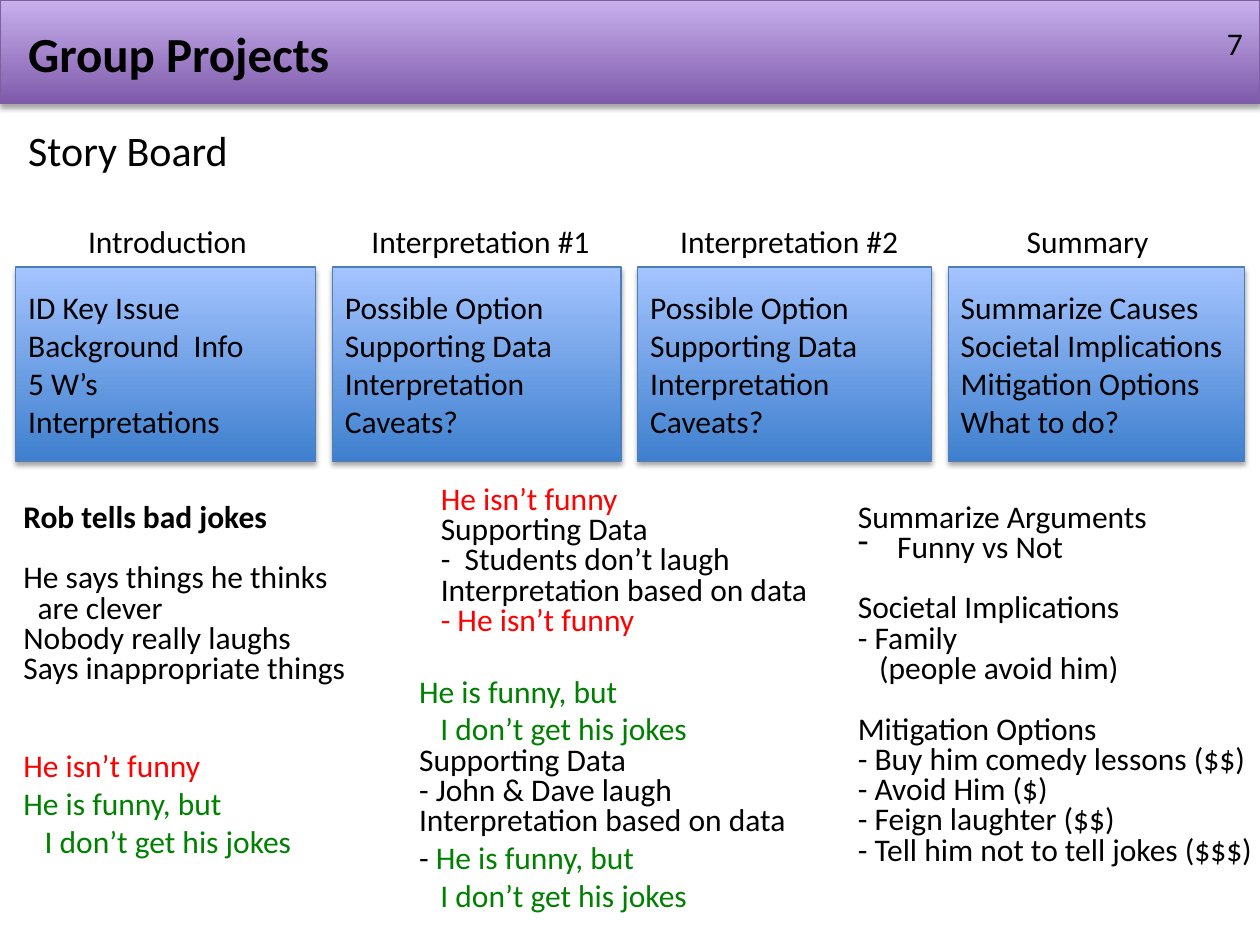
import dataclasses

import lxml.etree
import pptx
import pptx.dml.color
import pptx.enum.shapes
import pptx.enum.text
import pptx.oxml.ns
import pptx.util

Pt = pptx.util.Pt
RGBColor = pptx.dml.color.RGBColor
Anchor = pptx.enum.text.MSO_ANCHOR
Align = pptx.enum.text.PP_ALIGN
qn = pptx.oxml.ns.qn

BLACK = RGBColor(0x00, 0x00, 0x00)
RED = RGBColor(0xFF, 0x00, 0x00)
GREEN = RGBColor(0x00, 0x80, 0x00)
PURPLE_DARK = RGBColor(0x7F, 0x5B, 0xAB)
PURPLE_LIGHT = RGBColor(0xC8, 0xB0, 0xED)
PURPLE_LINE = RGBColor(0x7D, 0x60, 0xA0)
BLUE_DARK = RGBColor(0x3F, 0x80, 0xCE)
BLUE_LIGHT = RGBColor(0xA4, 0xC4, 0xFF)
BLUE_LINE = RGBColor(0x4B, 0x7E, 0xBC)

FONT = "Calibri"
TIGHT = 0.8
BLANK_LINE = 17.4
CARD_GAP = 9.6
INTERPRETATION = ["Possible Option", "Supporting Data", "Interpretation", "Caveats?"]


@dataclasses.dataclass
class Line:
    text: str
    color: RGBColor = BLACK
    spacing: float = TIGHT
    before: float = 0
    indent: float = 0
    bold: bool = False
    lead: str = ""
    bullet: str = ""


CARDS = [
    ("Introduction", 43.2, 106.6, 171.4,
     ["ID Key Issue", "Background  Info", "5 W’s", "Interpretations"]),
    ("Interpretation #1", 205.2, 141.8, 164.9, INTERPRETATION),
    ("Interpretation #2", 381.6, 141.8, 167.8, INTERPRETATION),
    ("Summary", 579.6, 85, 169.2,
     ["Summarize Causes", "Societal Implications", "Mitigation Options", "What to do?"]),
]


def funny_lines(before=0, lead=""):
    return [
        Line("He is funny, but", GREEN, 1, before=before, lead=lead),
        Line("I don’t get his jokes", GREEN, 1, indent=12.2),
    ]


INTRODUCTION_NOTES = [
    Line("Rob tells bad jokes", bold=True),
    Line("He says things he thinks", before=BLANK_LINE),
    Line("are clever", indent=8.1),
    Line("Nobody really laughs"),
    Line("Says inappropriate things"),
    Line("He isn’t funny", RED, 1, before=2 * BLANK_LINE),
    *funny_lines(),
]
NOT_FUNNY_NOTES = [
    Line("He isn’t funny", RED),
    Line("Supporting Data"),
    Line("-  Students don’t laugh"),
    Line("Interpretation based on data"),
    Line("- He isn’t funny", RED),
]
FUNNY_NOTES = [
    *funny_lines(),
    Line("Supporting Data"),
    Line("- John & Dave laugh"),
    Line("Interpretation based on data"),
    *funny_lines(lead="- "),
]
SUMMARY_NOTES = [
    Line("Summarize Arguments"),
    Line("Funny vs Not", indent=22.5, bullet="-"),
    Line("Societal Implications", before=BLANK_LINE),
    Line("- Family"),
    Line("(people avoid him)", indent=12.2),
    Line("Mitigation Options", before=BLANK_LINE),
    Line("- Buy him comedy lessons ($$)"),
    Line("- Avoid Him ($)"),
    Line("- Feign laughter ($$)"),
    Line("- Tell him not to tell jokes ($$$)"),
]


def format_run(run, size, color, bold):
    run.font.name = FONT
    run.font.size = Pt(size)
    run.font.color.rgb = color
    run.font.bold = bold


def write_lines(text_frame, lines, size=18, align=Align.LEFT):
    for index, line in enumerate(lines):
        paragraph = text_frame.paragraphs[0] if index == 0 else text_frame.add_paragraph()
        paragraph.alignment = align
        paragraph.line_spacing = line.spacing
        paragraph.space_before = Pt(line.before)
        properties = paragraph._p.get_or_add_pPr()
        properties.set("marL", str(Pt(line.indent)))
        if line.bullet:
            properties.set("indent", str(-Pt(line.indent)))
            lxml.etree.SubElement(properties, qn("a:buChar")).set("char", line.bullet)
        if line.lead:
            paragraph.text = line.lead
            format_run(paragraph.runs[0], size, BLACK, line.bold)
        run = paragraph.add_run()
        run.text = line.text
        format_run(run, size, line.color, line.bold)


def add_text(slide, left, top, width, height, lines, size=18, wrap=False,
             align=Align.LEFT, anchor=Anchor.TOP):
    shape = slide.shapes.add_textbox(Pt(left), Pt(top), Pt(width), Pt(height))
    text_frame = shape.text_frame
    text_frame.word_wrap = wrap
    text_frame.vertical_anchor = anchor
    write_lines(text_frame, lines, size, align)


def add_shadow(shape):
    shape.shadow.inherit = False
    effects = shape._element.spPr.find(qn("a:effectLst"))
    shadow = lxml.etree.SubElement(effects, qn("a:outerShdw"))
    shadow.set("blurRad", str(Pt(3.1)))
    shadow.set("dist", str(Pt(1.8)))
    shadow.set("dir", "5400000")
    shadow.set("rotWithShape", "0")
    color = lxml.etree.SubElement(shadow, qn("a:srgbClr"))
    color.set("val", str(BLACK))
    lxml.etree.SubElement(color, qn("a:alpha")).set("val", "35000")


def add_panel(slide, left, top, width, height, dark, light, line_color):
    shape = slide.shapes.add_shape(
        pptx.enum.shapes.MSO_SHAPE.RECTANGLE, Pt(left), Pt(top), Pt(width), Pt(height))
    shape.fill.gradient()
    shape.fill.gradient_angle = 90
    for stop, color in zip(shape.fill.gradient_stops, (dark, light)):
        stop.color.rgb = color
    shape.line.color.rgb = line_color
    shape.line.width = Pt(0.75)
    add_shadow(shape)
    return shape


def add_cards(slide):
    left = 9
    for heading, heading_left, heading_width, width, items in CARDS:
        add_text(slide, heading_left, 123.1, heading_width, 29, [Line(heading, spacing=1)])
        card = add_panel(slide, left, 152.6, width, 110.9, BLUE_DARK, BLUE_LIGHT, BLUE_LINE)
        card.text_frame.word_wrap = True
        card.text_frame.vertical_anchor = Anchor.MIDDLE
        write_lines(card.text_frame, [Line(item, spacing=1) for item in items])
        left += width + CARD_GAP


def main():
    presentation = pptx.Presentation()
    presentation.slide_width = Pt(720)
    presentation.slide_height = Pt(540)
    slide = presentation.slides.add_slide(presentation.slide_layouts[6])
    add_panel(slide, 0, 0, 720, 59, PURPLE_DARK, PURPLE_LIGHT, PURPLE_LINE)
    add_text(slide, 9, 10.1, 700, 41, [Line("Group Projects", spacing=1, bold=True)],
             size=28, wrap=True)
    add_text(slide, 549.4, 10.1, 167.8, 29, [Line("7", spacing=1)], wrap=True,
             align=Align.RIGHT, anchor=Anchor.MIDDLE)
    add_text(slide, 9, 67.7, 130.3, 36, [Line("Story Board", spacing=1)], size=24)
    add_cards(slide)
    add_text(slide, 6.3, 284.4, 201.6, 212.4, INTRODUCTION_NOTES)
    add_text(slide, 244.8, 274.3, 227.5, 95, NOT_FUNNY_NOTES)
    add_text(slide, 232.4, 380.2, 227.5, 168.5, FUNNY_NOTES)
    add_text(slide, 483.1, 284.4, 243.4, 260, SUMMARY_NOTES)
    presentation.save("out.pptx")


if __name__ == "__main__":
    main()
